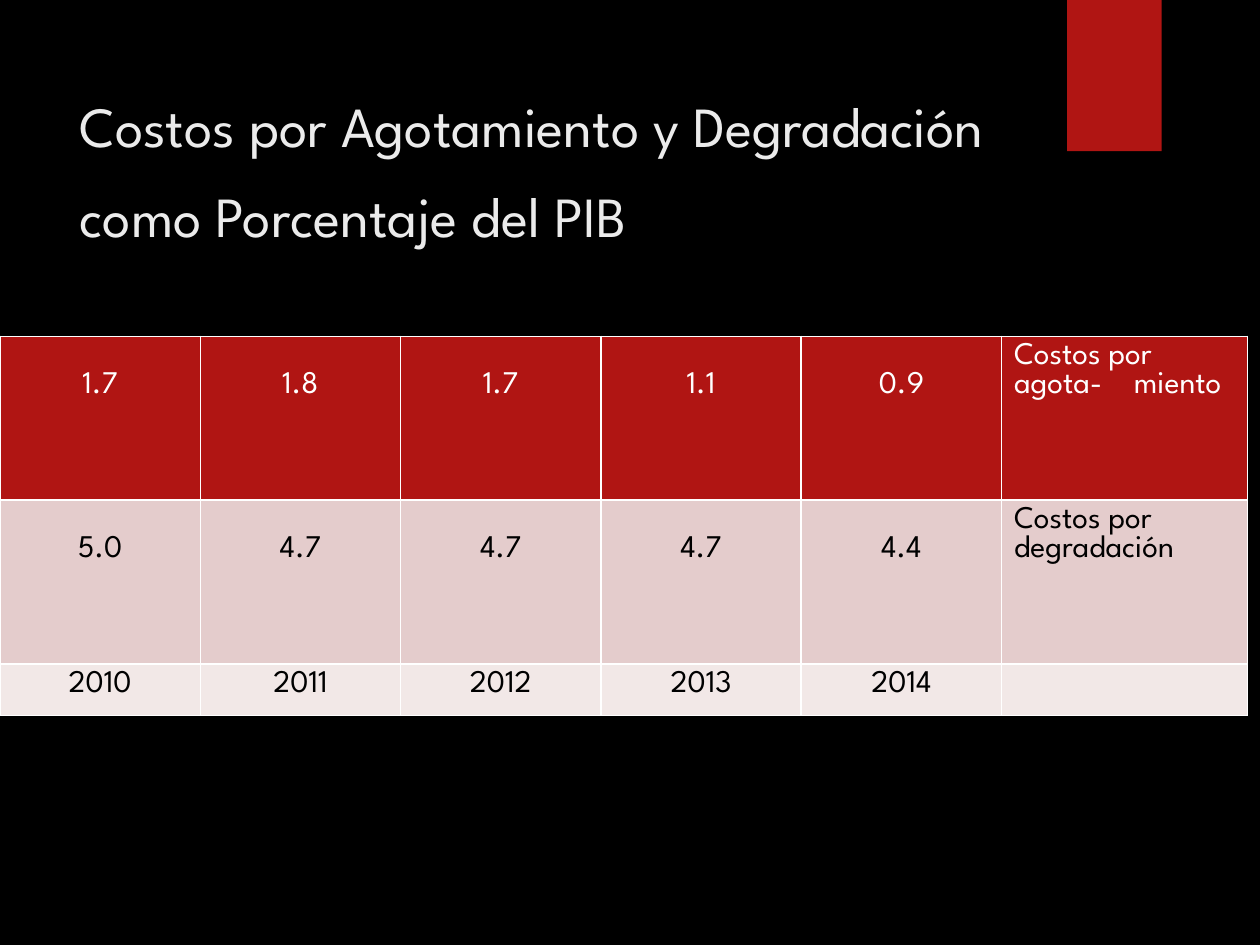
from lxml import etree
from pptx import Presentation
from pptx.dml.color import RGBColor
from pptx.enum.shapes import MSO_SHAPE
from pptx.enum.text import MSO_ANCHOR, PP_ALIGN
from pptx.oxml.ns import qn
from pptx.util import Inches, Pt

RECTANGLE = MSO_SHAPE.RECTANGLE
TOP = MSO_ANCHOR.TOP
LEFT, CENTER = PP_ALIGN.LEFT, PP_ALIGN.CENTER

FONT = "League Spartan"
COLORS = {
    "background": "000000",
    "accent": "B01513",
    "title": "EBEBEB",
    "white": "FFFFFF",
    "black": "000000",
    "band": "E4CCCC",
    "years": "F2E8E7",
}

ROWS = [
    ["1.7", "1.8", "1.7", "1.1", "0.9", "Costos por agota-\tmiento"],
    ["5.0", "4.7", "4.7", "4.7", "4.4", "Costos por degradación"],
    ["2010", "2011", "2012", "2013", "2014", ""],
]
# Fill, text colour, height and top margin of the figures, row by row
ROW_STYLES = [
    ("accent", "white", 1.3, 0.28),
    ("band", "black", 1.3, 0.28),
    ("years", "black", 0.41, 0.05),
]
COLUMN_WIDTHS = [1.59] * 5 + [1.95]
LABEL_COLUMN = 5


def color(name):
    return RGBColor.from_string(COLORS[name])


def format_text(paragraph, size, color_name, alignment):
    paragraph.alignment = alignment
    font = paragraph.font
    for target in [font] + [run.font for run in paragraph.runs]:
        target.name = FONT
        target.size = Pt(size)
        target.bold = False
        target.color.rgb = color(color_name)


def add_ribbon(slide):
    ribbon = slide.shapes.add_shape(
        RECTANGLE, Inches(8.47), 0, Inches(0.75), Inches(1.2))
    ribbon.shadow.inherit = False
    ribbon.fill.solid()
    ribbon.fill.fore_color.rgb = color("accent")
    ribbon.line.fill.background()


def add_title(slide, text):
    title = slide.shapes.title
    title.left, title.top = Inches(0.53), Inches(0.5)
    title.width, title.height = Inches(7.72), Inches(1.53)
    title.text_frame.text = text
    title.text_frame.word_wrap = True
    title.text_frame.vertical_anchor = TOP
    paragraph = title.text_frame.paragraphs[0]
    paragraph.line_spacing = 1.32
    format_text(paragraph, 32.4, "title", LEFT)


def set_borders(cell, color_name, width):
    properties = cell._tc.get_or_add_tcPr()
    for side in ("lnL", "lnR", "lnT", "lnB"):
        line = etree.SubElement(properties, qn(f"a:{side}"), w=str(Pt(width)))
        fill = etree.SubElement(line, qn("a:solidFill"))
        etree.SubElement(fill, qn("a:srgbClr"), val=COLORS[color_name])


def add_tab_stop(paragraph, position):
    properties = paragraph._p.get_or_add_pPr()
    tab_list = etree.Element(qn("a:tabLst"))
    etree.SubElement(tab_list, qn("a:tab"), pos=str(Inches(position)), algn="l")
    default_run = properties.find(qn("a:defRPr"))
    default_run.addprevious(tab_list)


def fill_cell(cell, text, style, is_label):
    fill_name, text_color, _, figure_margin = style
    set_borders(cell, "white", 1)
    cell.fill.solid()
    cell.fill.fore_color.rgb = color(fill_name)
    cell.margin_top = Inches(0.05 if is_label else figure_margin)
    cell.text_frame.text = text
    paragraph = cell.text_frame.paragraphs[0]
    format_text(paragraph, 18, text_color, LEFT if is_label else CENTER)
    if "\t" in text:
        add_tab_stop(paragraph, 0.95)


def add_cost_table(slide):
    table = slide.shapes.add_table(
        len(ROWS), len(COLUMN_WIDTHS), 0, Inches(2.67),
        Inches(sum(COLUMN_WIDTHS)), Inches(3.01)).table
    table.first_row = False
    table.horz_banding = False
    for column, width in zip(table.columns, COLUMN_WIDTHS):
        column.width = Inches(width)
    for row, texts, style in zip(table.rows, ROWS, ROW_STYLES):
        row.height = Inches(style[2])
        for index, (cell, text) in enumerate(zip(row.cells, texts)):
            fill_cell(cell, text, style, index == LABEL_COLUMN)


def main():
    presentation = Presentation()
    presentation.slide_width = Inches(10)
    presentation.slide_height = Inches(7.5)
    slide = presentation.slides.add_slide(presentation.slide_layouts[5])

    # Background and ribbon
    slide.background.fill.solid()
    slide.background.fill.fore_color.rgb = color("background")
    add_ribbon(slide)

    # Title and table
    add_title(slide, "Costos por Agotamiento y Degradación "
                     "como Porcentaje del PIB")
    add_cost_table(slide)

    presentation.save("out.pptx")


if __name__ == "__main__":
    main()
